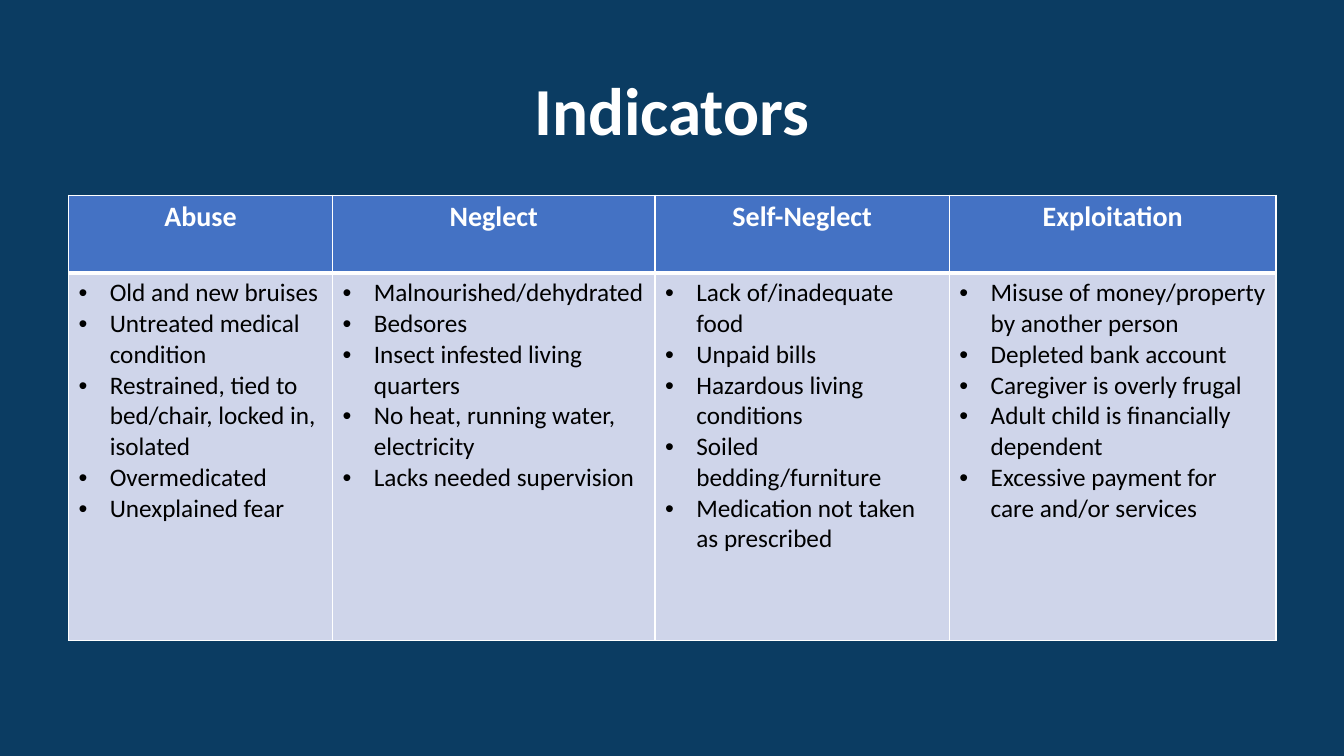
"""Build the slide that lists indicators of abuse, neglect and exploitation."""
from dataclasses import dataclass

from lxml import etree
from pptx import Presentation
from pptx import util as u
from pptx.dml.color import RGBColor
from pptx.enum import text
from pptx.oxml import ns
from pptx.table import _Cell
from pptx.text.text import TextFrame

GRID_COLUMNS = 160
WIDTH, HEIGHT = u.Inches(13.33), u.Inches(7.5)
NAVY, BLUE, PALE, WHITE, BLACK = "0B3C62", "4472C4", "CFD5EA", "FFFFFF", "000000"
HEADING_ROWS, SIGNS_ROWS = 9.24, 43.8


@dataclass(frozen=True)
class Category:
    """One table column: its heading, width in grid columns and warning signs."""
    heading: str
    columns: float
    signs: tuple[str, ...]


CATEGORIES = (
    Category("Abuse", 31.44, (
        "Old and new bruises",
        "Untreated medical condition",
        "Restrained, tied to bed/chair, locked in, isolated",
        "Overmedicated",
        "Unexplained fear")),
    Category("Neglect", 38.4, (
        "Malnourished/dehydrated",
        "Bedsores",
        "Insect infested living quarters",
        "No heat, running water, electricity",
        "Lacks needed supervision")),
    Category("Self-Neglect", 35.04, (
        "Lack of/inadequate food",
        "Unpaid bills",
        "Hazardous living conditions",
        "Soiled bedding/furniture",
        "Medication not taken as prescribed")),
    Category("Exploitation", 38.88, (
        "Misuse of money/property by another person",
        "Depleted bank account",
        "Caregiver is overly frugal",
        "Adult child is financially dependent",
        "Excessive payment for care and/or services")),
)


def grid(units: float) -> int:
    """Convert grid columns or rows to a length."""
    return round(units * WIDTH / GRID_COLUMNS)


def color(value: str) -> RGBColor:
    """Convert a hex string to a colour."""
    return RGBColor.from_string(value)


def write(frame: TextFrame, lines: tuple[str, ...], *, size: float, ink: str,
          bold: bool = False, align: text.PP_ALIGN = text.PP_ALIGN.LEFT,
          spacing: float = 1.0, bullet: str = "") -> None:
    """Write one formatted paragraph per line."""
    for index, line in enumerate(lines):
        paragraph = frame.add_paragraph() if index else frame.paragraphs[0]
        if bullet:
            properties = paragraph._p.get_or_add_pPr()
            properties.set("marL", str(u.Inches(0.31)))
            properties.set("indent", str(-u.Inches(0.31)))
            etree.SubElement(properties, ns.qn("a:buFont"), typeface="Arial")
            etree.SubElement(properties, ns.qn("a:buChar"), char=bullet)
        paragraph.alignment = align
        paragraph.line_spacing = spacing
        run = paragraph.add_run()
        run.text = line
        run.font.name = "Calibri"
        run.font.size = u.Pt(size)
        run.font.bold = bold
        run.font.color.rgb = color(ink)


def style_cell(cell: _Cell, fill: str, *, top: float = 1, bottom: float = 1) -> None:
    """Give a cell white borders and a solid fill."""
    properties = cell._tc.get_or_add_tcPr()
    for side, points in (("L", 1), ("R", 1), ("T", top), ("B", bottom)):
        border = etree.SubElement(properties, ns.qn(f"a:ln{side}"), w=str(u.Pt(points)))
        solid = etree.SubElement(border, ns.qn("a:solidFill"))
        etree.SubElement(solid, ns.qn("a:srgbClr"), val=WHITE)
    cell.fill.solid()
    cell.fill.fore_color.rgb = color(fill)


def main() -> None:
    """Draw the title and the indicator table."""
    deck = Presentation()
    deck.slide_width, deck.slide_height = WIDTH, HEIGHT
    slide = deck.slides.add_slide(deck.slide_layouts.get_by_name("Title Only"))
    slide.background.fill.solid()
    slide.background.fill.fore_color.rgb = color(NAVY)

    title = slide.shapes.title
    title.left, title.top = grid(11), grid(4.8)
    title.width, title.height = grid(138), grid(17.4)
    title.text_frame.vertical_anchor = text.MSO_ANCHOR.MIDDLE
    write(title.text_frame, ("Indicators",), size=48, ink=WHITE, bold=True,
          align=text.PP_ALIGN.CENTER, spacing=0.9)

    total_columns = sum(category.columns for category in CATEGORIES)
    indicators = slide.shapes.add_table(
        2, len(CATEGORIES), grid(8.15), grid(23.25),
        grid(total_columns), grid(HEADING_ROWS + SIGNS_ROWS)).table
    for row, rows in zip(indicators.rows, (HEADING_ROWS, SIGNS_ROWS)):
        row.height = grid(rows)
    for index, category in enumerate(CATEGORIES):
        indicators.columns[index].width = grid(category.columns)
        heading, signs = indicators.cell(0, index), indicators.cell(1, index)
        style_cell(heading, BLUE, bottom=3)
        write(heading.text_frame, (category.heading,), size=20, ink=WHITE, bold=True,
              align=text.PP_ALIGN.CENTER)
        style_cell(signs, PALE, top=3)
        write(signs.text_frame, category.signs, size=18, ink=BLACK, bullet="•")

    deck.save("out.pptx")


if __name__ == "__main__":
    main()
